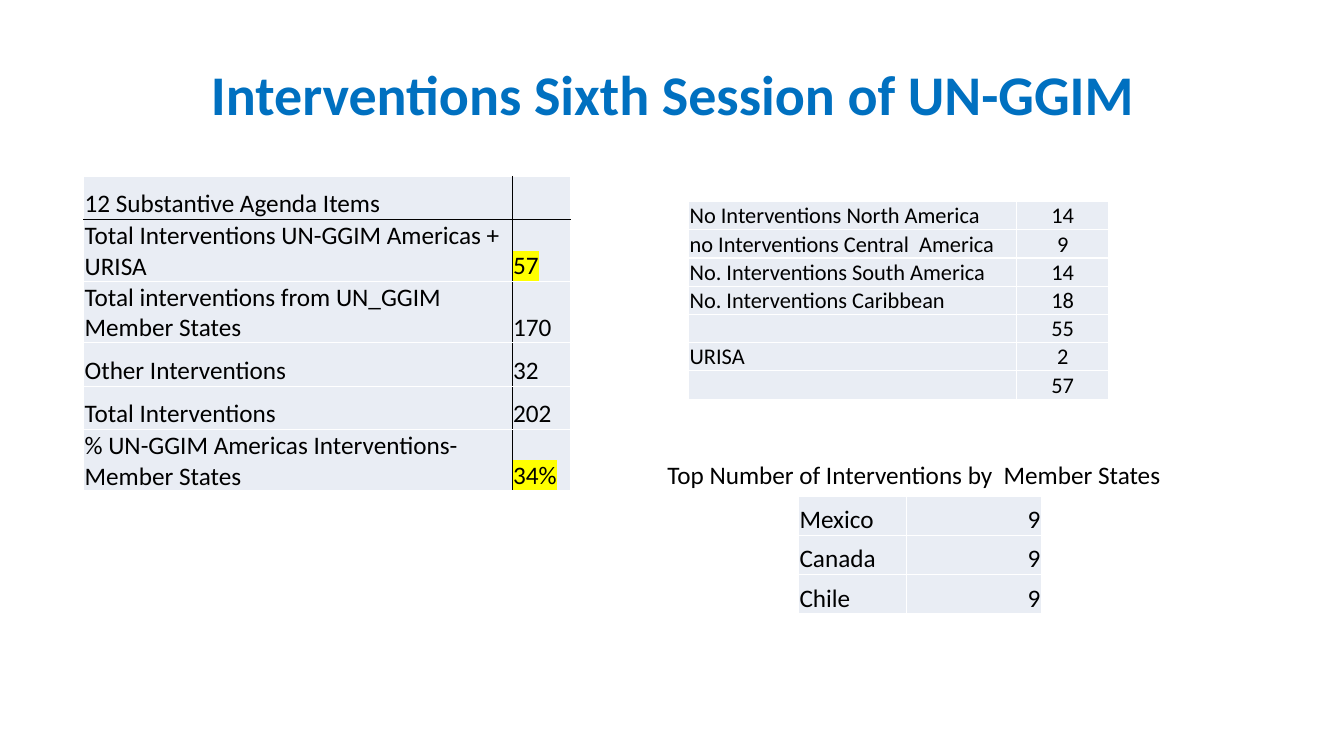
from lxml.etree import SubElement
from pptx import Presentation
from pptx.dml.color import RGBColor
from pptx.enum.text import MSO_ANCHOR as Anchor, PP_ALIGN as Align
from pptx.oxml.ns import qn
from pptx.util import Inches, Pt

FONT, INK, BLUE = "Calibri", "000000", "0070C0"
FILL, RULE, MARK = "E9EDF4", "FFFFFF", "FFFF00"
TITLE = "Interventions Sixth Session of UN-GGIM"
TOP = "Top Number of Interventions by  Member States"
TOTALS = [
    ("12 Substantive Agenda Items", ""),
    ("Total Interventions UN-GGIM Americas + URISA", "57"),
    ("Total interventions from UN_GGIM Member States", "170"),
    ("Other Interventions", "32"),
    ("Total Interventions", "202"),
    ("% UN-GGIM Americas Interventions- Member States", "34%"),
]
REGIONS = [
    ("No Interventions North America", "14"),
    ("no Interventions Central  America", "9"),
    ("No. Interventions South America", "14"),
    ("No. Interventions Caribbean", "18"),
    ("", "55"),
    ("URISA", "2"),
    ("", "57"),
]
STATES = [("Mexico", "9"), ("Canada", "9"), ("Chile", "9")]
TABLES = [
    dict(rows=TOTALS, at=(0.83, 1.75), cols=(4.25, 0.58), high=0.43,
         size=18, align=Align.LEFT, marks=("57", "34%"), cross=True),
    dict(rows=REGIONS, at=(6.83, 2), cols=(3.25, 0.92), high=0.28,
         size=16, align=Align.CENTER),
    dict(rows=STATES, at=(7.92, 4.92), cols=(1.07, 1.34), high=0.39,
         size=18, align=Align.RIGHT),
]


def color(code):
    return RGBColor.from_string(code)


def style(para, size, code=INK, bold=False, align=Align.LEFT):
    para.alignment = align
    font = para.font
    font.name, font.size, font.bold = FONT, Pt(size), bold
    font.color.rgb = color(code)


def paint(node, code):
    SubElement(SubElement(node, qn("a:solidFill")), qn("a:srgbClr"), val=code)


def edge(cell, row, col, cross):
    dark = {"R": col == 0, "L": col == 1, "B": row == 0, "T": row == 1}
    props = cell._tc.get_or_add_tcPr()
    for side in "LRTB":
        line = SubElement(props, qn(f"a:ln{side}"), w=str(Pt(1)))
        paint(line, INK if cross and dark[side] else RULE)


def fill_cell(cell, text, size, align, mark):
    cell.margin_left = cell.margin_right = cell.margin_top = Inches(0.01)
    cell.margin_bottom = 0
    cell.vertical_anchor = Anchor.BOTTOM
    cell.fill.solid()
    cell.fill.fore_color.rgb = color(FILL)
    para = cell.text_frame.paragraphs[0]
    style(para, size, align=align)
    if not text:
        SubElement(para._p, qn("a:endParaRPr"), sz=str(size * 100))
        return
    run = para.add_run()
    run.text = text
    if mark:
        glow = SubElement(run._r.get_or_add_rPr(), qn("a:highlight"))
        SubElement(glow, qn("a:srgbClr"), val=MARK)


def add_grid(slide, rows, at, cols, high, size, align, marks=(), cross=False):
    box = map(Inches, (*at, sum(cols), high * len(rows)))
    table = slide.shapes.add_table(len(rows), len(cols), *box).table
    table.first_row = table.horz_banding = False
    for col, wide in zip(table.columns, cols):
        col.width = Inches(wide)
    for r, row in enumerate(rows):
        table.rows[r].height = Inches(high)
        for c, text in enumerate(row):
            cell = table.cell(r, c)
            edge(cell, r, c, cross)
            fill_cell(cell, text, size, align if c else Align.LEFT, text in marks)


def add_text(slide, text, at, wrap, anchor, **look):
    frame = slide.shapes.add_textbox(*map(Inches, at)).text_frame
    frame.word_wrap, frame.vertical_anchor = wrap, anchor
    para = frame.paragraphs[0]
    para.text = text
    style(para, **look)


def main():
    """Build the slide of intervention counts."""
    deck = Presentation()
    deck.slide_width, deck.slide_height = Inches(13.33), Inches(7.5)
    slide = deck.slides.add_slide(deck.slide_layouts[6])
    add_text(slide, TITLE, (0.67, 0.3, 12, 1.25), True, Anchor.MIDDLE,
             size=40, code=BLUE, bold=True, align=Align.CENTER)
    for grid in TABLES:
        add_grid(slide, **grid)
    add_text(slide, TOP, (6.52, 4.51, 5.21, 0.4), False, Anchor.TOP, size=18)
    deck.save("out.pptx")


if __name__ == "__main__":
    main()
